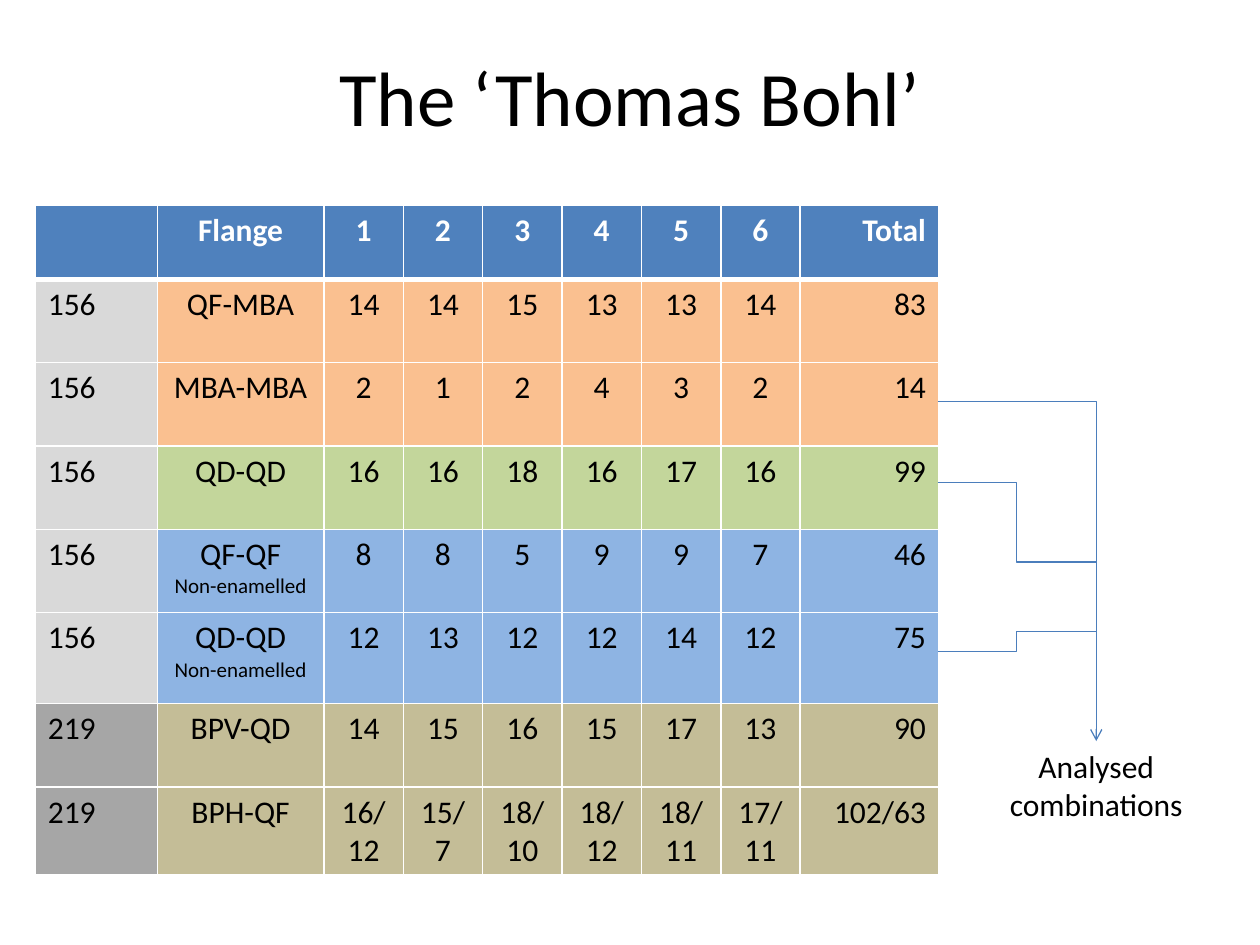
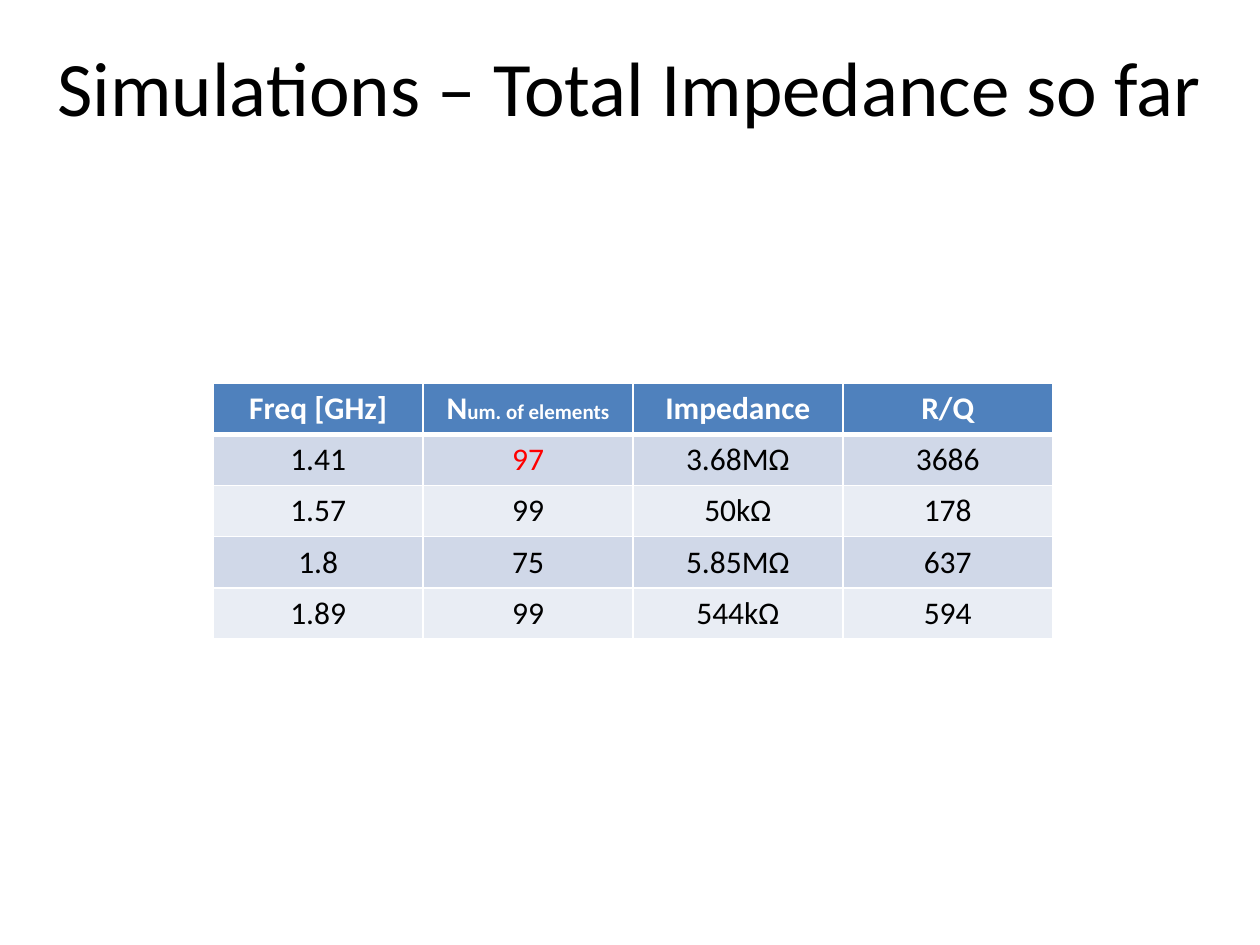
import pptx
import pptx.dml.color
import pptx.enum.shapes
import pptx.enum.text
import pptx.oxml
import pptx.oxml.ns
import pptx.util

Cm = pptx.util.Cm
Pt = pptx.util.Pt
RGBColor = pptx.dml.color.RGBColor
ALIGN = pptx.enum.text.PP_ALIGN
NAMESPACE = pptx.oxml.ns.nsdecls("a")

BLACK = RGBColor(0x00, 0x00, 0x00)
WHITE = RGBColor(0xFF, 0xFF, 0xFF)
RED = RGBColor(0xFF, 0x00, 0x00)
HEADER_BLUE = RGBColor(0x4F, 0x81, 0xBD)
LINE_BLUE = RGBColor(0x4B, 0x7E, 0xBC)
LIGHT_GREY = RGBColor(0xD9, 0xD9, 0xD9)
DARK_GREY = RGBColor(0xA6, 0xA6, 0xA6)
ORANGE = RGBColor(0xFA, 0xC0, 0x90)
GREEN = RGBColor(0xC3, 0xD6, 0x9B)
SKY_BLUE = RGBColor(0x8E, 0xB4, 0xE3)
TAN = RGBColor(0xC4, 0xBD, 0x97)
BANDS = (RGBColor(0xD0, 0xD8, 0xE8), RGBColor(0xE9, 0xED, 0xF4))

FLANGE_ROWS = [
    (LIGHT_GREY, ORANGE, ["156", "QF-MBA", "14", "14", "15", "13", "13", "14", "83"]),
    (LIGHT_GREY, ORANGE, ["156", "MBA-MBA", "2", "1", "2", "4", "3", "2", "14"]),
    (LIGHT_GREY, GREEN, ["156", "QD-QD", "16", "16", "18", "16", "17", "16", "99"]),
    (LIGHT_GREY, SKY_BLUE,
     ["156", "QF-QF\nNon-enamelled", "8", "8", "5", "9", "9", "7", "46"]),
    (LIGHT_GREY, SKY_BLUE,
     ["156", "QD-QD\nNon-enamelled", "12", "13", "12", "12", "14", "12", "75"]),
    (DARK_GREY, TAN, ["219", "BPV-QD", "14", "15", "16", "15", "17", "13", "90"]),
    (DARK_GREY, TAN,
     ["219", "BPH-QF", "16/12", "15/7", "18/10", "18/12", "18/11", "17/11", "102/63"]),
]
IMPEDANCE_ROWS = [
    ["1.41", "97", "3.68MΩ", "3686"],
    ["1.57", "99", "50kΩ", "178"],
    ["1.8", "75", "5.85MΩ", "637"],
    ["1.89", "99", "544kΩ", "594"],
]


class Deck:
    font = "Calibri"
    title_size = 44
    body_size = 18
    small_size = 12

    def __init__(self):
        self.presentation = pptx.Presentation()
        self.presentation.slide_width = Cm(25.4)
        self.presentation.slide_height = Cm(19.05)

    def add_slide(self):
        self.slide = self.presentation.slides.add_slide(
            self.presentation.slide_layouts[6])

    def format_paragraph(self, paragraph, size, align, color=BLACK, bold=False):
        paragraph.alignment = align
        for run in paragraph.runs:
            run.font.name = self.font
            run.font.size = Pt(size)
            run.font.bold = bold
            run.font.color.rgb = color

    def text(self, words, left, top, width, height, size):
        frame = self.slide.shapes.add_textbox(
            Cm(left), Cm(top), Cm(width), Cm(height)).text_frame
        frame.word_wrap = True
        frame.text = words
        self.format_paragraph(frame.paragraphs[0], size, ALIGN.CENTER)
        return frame

    def title(self, words, left, top, width):
        frame = self.text(words, left, top, width, 3.18, self.title_size)
        frame.vertical_anchor = pptx.enum.text.MSO_ANCHOR.MIDDLE

    def borders(self, cell, top, bottom):
        """Draw white cell edges; top and bottom are widths in points."""
        properties = cell._tc.get_or_add_tcPr()
        for index, (side, points) in enumerate(
                [("L", 1), ("R", 1), ("T", top), ("B", bottom)]):
            properties.insert(index, pptx.oxml.parse_xml(
                f'<a:ln{side} {NAMESPACE} w="{Pt(points)}"><a:solidFill>'
                f'<a:srgbClr val="{WHITE}"/></a:solidFill></a:ln{side}>'))

    def table(self, rows, fills, left, top, widths, heights, aligns):
        """Build a table whose first row is the header; fills covers the other rows."""
        table = self.slide.shapes.add_table(
            len(rows), len(widths), Cm(left), Cm(top),
            Cm(sum(widths)), Cm(sum(heights))).table
        for column, width in zip(table.columns, widths):
            column.width = Cm(width)
        for row, height in zip(table.rows, heights):
            row.height = Cm(height)
        all_fills = [[HEADER_BLUE] * len(widths)] + fills
        for r, row in enumerate(rows):
            header = r == 0
            for c, words in enumerate(row):
                cell = table.cell(r, c)
                cell.text_frame.text = words
                for p, paragraph in enumerate(cell.text_frame.paragraphs):
                    self.format_paragraph(
                        paragraph, self.small_size if p else self.body_size,
                        aligns[c], WHITE if header else BLACK, header)
                cell.fill.solid()
                cell.fill.fore_color.rgb = all_fills[r][c]
                self.borders(cell, 3 if r == 1 else 1, 3 if header else 1)
        return table

    def elbow(self, start, end, arrow=False):
        """Link two points; with an arrow the line turns once, otherwise twice."""
        link = self.slide.shapes.add_connector(
            pptx.enum.shapes.MSO_CONNECTOR.ELBOW,
            *[Cm(value) for value in start + end])
        link.line.color.rgb = LINE_BLUE
        link.line.width = Pt(0.75)
        properties = link._element.spPr
        if arrow:
            properties.prstGeom.set("prst", "bentConnector2")
            link.line._get_or_add_ln().append(
                pptx.oxml.parse_xml(f'<a:tailEnd {NAMESPACE} type="arrow"/>'))
        properties.append(pptx.oxml.parse_xml(f"<a:effectLst {NAMESPACE}/>"))


def build_flange_slide(deck):
    deck.add_slide()
    deck.title("The ‘Thomas Bohl’", 1.27, 0.33, 22.86)
    header = ["", "Flange"] + [str(number) for number in range(1, 7)] + ["Total"]
    deck.table(
        [header] + [values for _, _, values in FLANGE_ROWS],
        [[size_fill] + [fill] * 8 for size_fill, fill, _ in FLANGE_ROWS],
        0.71, 4.13, [2.46, 3.36] + [1.6] * 6 + [2.79],
        [1.5] + [1.68] * 4 + [1.83] + [1.68] * 2,
        [ALIGN.LEFT] + [ALIGN.CENTER] * 7 + [ALIGN.RIGHT])
    deck.text("Analysed combinations", 19.1, 14.94, 6, 1.8, deck.body_size)
    table_edge, trunk = 18.9, 22.1
    deck.elbow((table_edge, 8.1), (trunk, 14.94), arrow=True)
    for row_y, trunk_y in [(13.13, 12.73), (9.73, 11.33)]:
        deck.elbow((table_edge, row_y), (trunk, trunk_y))


def build_impedance_slide(deck):
    deck.add_slide()
    deck.title("Simulations – Total Impedance so far", 0, 0.13, 25.4)
    table = deck.table(
        [["Freq [GHz]", "N", "Impedance", "R/Q"]] + IMPEDANCE_ROWS,
        [[BANDS[r % 2]] * 4 for r in range(len(IMPEDANCE_ROWS))],
        4.3, 7.73, [4.23] * 4, [1.03] * 5, [ALIGN.CENTER] * 4)
    count_header = table.cell(0, 1).text_frame.paragraphs[0]
    count_header.add_run().text = "um. of elements"
    deck.format_paragraph(count_header, deck.small_size, ALIGN.CENTER, WHITE, True)
    count_header.runs[0].font.size = Pt(deck.body_size)
    first_count = table.cell(1, 1).text_frame.paragraphs[0]
    first_count.runs[0].font.color.rgb = RED


def main():
    deck = Deck()
    build_flange_slide(deck)
    build_impedance_slide(deck)
    deck.presentation.save("out.pptx")


if __name__ == "__main__":
    main()
